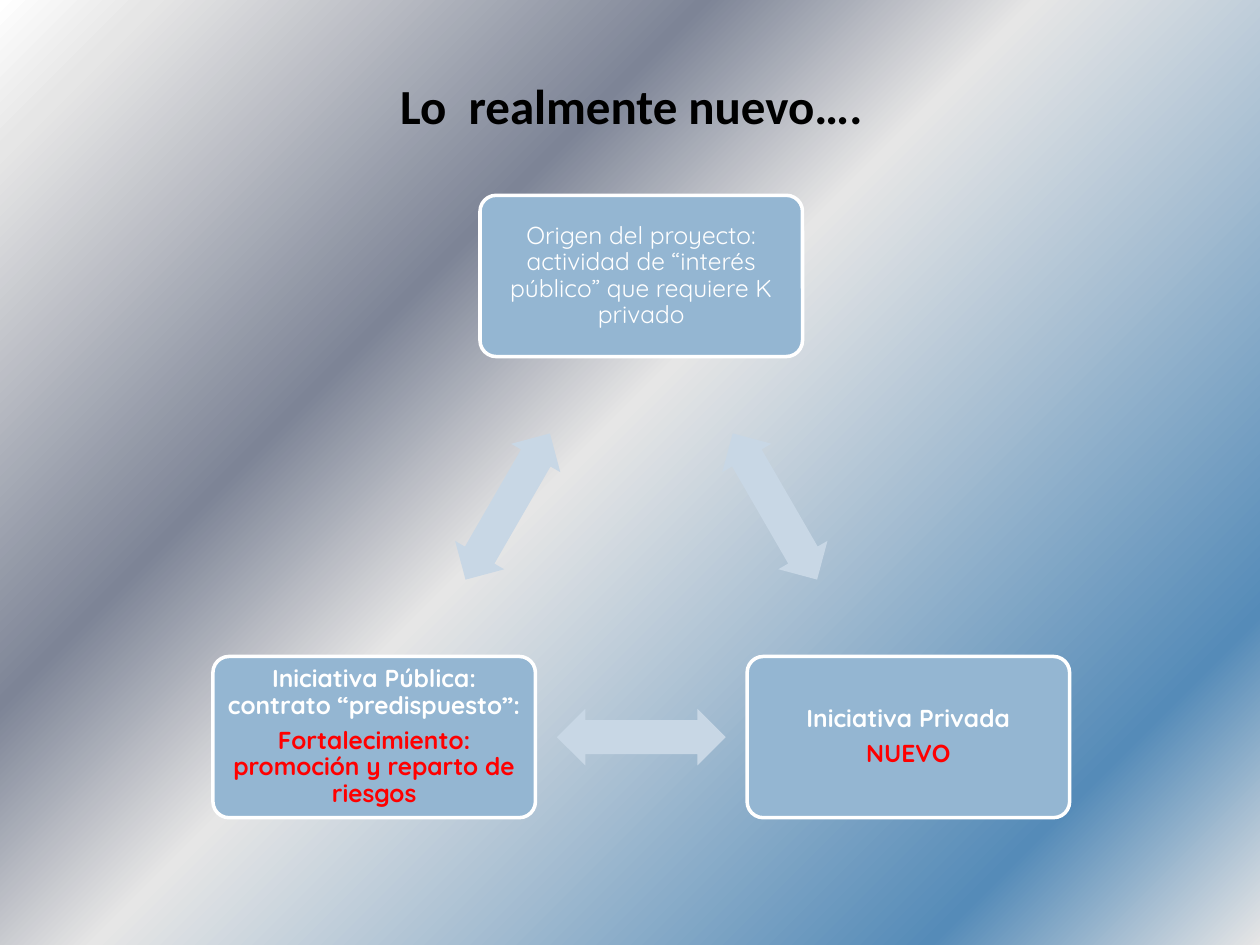
from dataclasses import dataclass

from lxml import etree
from pptx import Presentation
from pptx.dml.color import RGBColor
from pptx.enum.shapes import MSO_SHAPE
from pptx.enum.text import MSO_ANCHOR, PP_ALIGN
from pptx.oxml import parse_xml
from pptx.oxml.ns import nsdecls, qn
from pptx.util import Inches, Pt

BOX, ARROW = MSO_SHAPE.ROUNDED_RECTANGLE, MSO_SHAPE.LEFT_RIGHT_ARROW
CENTER, MIDDLE = PP_ALIGN.CENTER, MSO_ANCHOR.MIDDLE

WHITE, RED, BLACK = "FFFFFF", "FF0000", "000000"
BOX_FILL, ARROW_FILL = "94B6D2", "C8D7E5"
BOX_W, BOX_H = 2.56, 1.28
ARROW_W, ARROW_H = 1.34, 0.45
BACKGROUND_STOPS = [(0, "FFFFFF"), (7, "E6E6E6"), (32, "7D8496"),
                    (47, "E6E6E6"), (85, "558BB8"), (100, "E6E6E6")]


@dataclass
class Line:
    text: str
    color: str = WHITE
    bold: bool = True


@dataclass
class Node:
    cx: float
    cy: float
    lines: list[Line]


NODES = [
    Node(5.09, 2.19, [Line("Origen del proyecto: actividad de “interés público” "
                           "que requiere K privado", bold=False)]),
    Node(7.21, 5.85, [Line("Iniciativa Privada"), Line("NUEVO", RED)]),
    Node(2.97, 5.85, [Line("Iniciativa Pública: contrato “predispuesto”:"),
                      Line("Fortalecimiento: promoción y reparto de riesgos", RED)]),
]


def rgb(color: str) -> RGBColor:
    return RGBColor.from_string(color)


def set_attrs(obj, values: dict) -> None:
    for name, value in values.items():
        setattr(obj, name, value)


def set_font(font, name: str, size: float, color: str, bold: bool) -> None:
    set_attrs(font, {"name": name, "size": Pt(size), "bold": bold})
    font.color.rgb = rgb(color)


def set_background(s) -> None:
    """Fill the slide with a gradient spreading from its top left corner."""
    s.background.fill.solid()
    bg = s._element.find(".//" + qn("p:bgPr"))
    grad = parse_xml(f'<a:gradFill {nsdecls("a")} rotWithShape="1"><a:gsLst/>'
                     '<a:path path="circle"><a:fillToRect r="100000" b="100000"/>'
                     '</a:path></a:gradFill>')
    for pos, color in BACKGROUND_STOPS:
        gs = etree.SubElement(grad[0], qn("a:gs"), pos=str(pos * 1000))
        etree.SubElement(gs, qn("a:srgbClr"), val=color)
    bg.replace(bg.find(qn("a:solidFill")), grad)


def add_centered(s, kind, cx: float, cy: float, w: float, h: float, fill: str):
    sp = s.shapes.add_shape(kind, Inches(cx - w / 2), Inches(cy - h / 2),
                            Inches(w), Inches(h))
    sp.shadow.inherit = False
    sp.fill.solid()
    sp.fill.fore_color.rgb = rgb(fill)
    return sp


def add_node(s, node: Node) -> None:
    sp = add_centered(s, BOX, node.cx, node.cy, BOX_W, BOX_H, BOX_FILL)
    sp.adjustments[0] = 0.1
    sp.line.color.rgb = rgb(WHITE)
    sp.line.width = Pt(2)
    tf = sp.text_frame
    set_attrs(tf, {"word_wrap": True, "vertical_anchor": MIDDLE})
    set_attrs(tf, {f"margin_{side}": Inches(0.06)
                   for side in ("left", "top", "right", "bottom")})
    for i, line in enumerate(node.lines):
        p = tf.add_paragraph() if i else tf.paragraphs[0]
        set_attrs(p, {"alignment": CENTER, "line_spacing": 0.9,
                      "space_after": Pt(4.9)})
        r = p.add_run()
        r.text = line.text
        set_font(r.font, "Quicksand", 14, line.color, line.bold)


def add_arrow(s, start: Node, end: Node, rotation: float) -> None:
    """Place a double arrow halfway between two nodes."""
    sp = add_centered(s, ARROW, (start.cx + end.cx) / 2, (start.cy + end.cy) / 2,
                      ARROW_W, ARROW_H, ARROW_FILL)
    sp.adjustments[0], sp.adjustments[1] = 0.6, 0.5
    sp.line.fill.background()
    sp.rotation = rotation


def add_title(s, text: str) -> None:
    title = s.shapes.title
    set_attrs(title, {"left": Inches(0.51), "top": Inches(0.21),
                      "width": Inches(9), "height": Inches(1.25)})
    title.text_frame.vertical_anchor = MIDDLE
    p = title.text_frame.paragraphs[0]
    p.alignment = CENTER
    r = p.add_run()
    r.text = text
    set_font(r.font, "Calibri", 28, BLACK, True)


def main() -> None:
    prs = Presentation()
    prs.slide_width, prs.slide_height = Inches(10), Inches(7.5)
    s = prs.slides.add_slide(prs.slide_layouts[5])
    set_background(s)
    add_title(s, "Lo  realmente nuevo….")
    for i, node in enumerate(NODES):
        add_node(s, node)
        add_arrow(s, node, NODES[(i + 1) % len(NODES)], 60 + 120 * i)
    prs.save("out.pptx")


if __name__ == "__main__":
    main()
